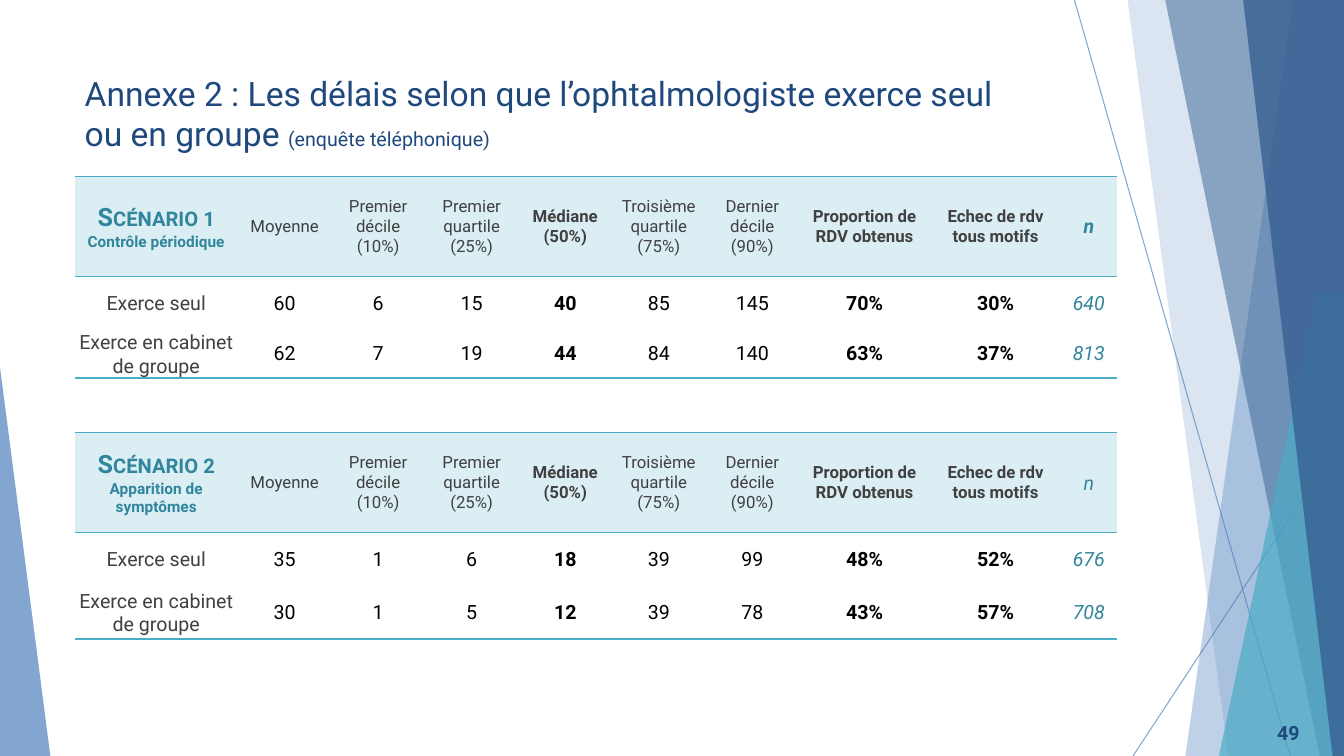
from dataclasses import dataclass

import pptx
import pptx.dml.color
import pptx.enum.shapes
import pptx.enum.text
import pptx.oxml
import pptx.oxml.ns
import pptx.util

RGBColor = pptx.dml.color.RGBColor
BLUE = RGBColor(0x4F, 0x81, 0xBD)
DEEP_BLUE = RGBColor(0x37, 0x60, 0x92)
NAVY = RGBColor(0x1F, 0x49, 0x7D)
AQUA = RGBColor(0x4B, 0xAC, 0xC6)
TEAL = RGBColor(0x31, 0x85, 0x9C)
PALE_AQUA = RGBColor(0xDB, 0xEE, 0xF4)
GREY = RGBColor(0x40, 0x40, 0x40)
BLACK = RGBColor(0, 0, 0)

FONT = "Roboto"
SLIDE_WIDTH = pptx.util.Inches(13.333)
SLIDE_HEIGHT = pptx.util.Inches(7.5)
NO_STYLE = "{2D5ABB26-0587-4C30-8999-92F81FD0307C}"
CENTER = pptx.enum.text.PP_ALIGN.CENTER
MIDDLE = pptx.enum.text.MSO_ANCHOR.MIDDLE

LEFT = 5.55
COLUMN_SHARES = [12.15] + [6.96] * 6 + [9.75] * 2 + [4.13]
MEASURES = ["Moyenne", "Premier décile\n(10%)", "Premier quartile\n(25%)", "Médiane\n(50%)",
            "Troisième quartile (75%)", "Dernier décile\n(90%)",
            "Proportion de RDV obtenus", "Echec de rdv tous motifs"]
KEY_COLUMNS = {4, 7, 8}
COUNT_COLUMN = 9


@dataclass(frozen=True)
class Facet:
    points: list[tuple[float, float]]
    color: RGBColor
    opacity: int


@dataclass(frozen=True)
class Ray:
    start: tuple[float, float]
    end: tuple[float, float]


@dataclass(frozen=True)
class Look:
    size: float
    color: RGBColor
    bold: bool = False
    italic: bool = False
    small_caps: bool = False


@dataclass(frozen=True)
class Scenario:
    heading: str
    reason: str
    top: float
    row_shares: list[float]
    count_bold: bool
    alone: list[str]
    grouped: list[str]


RAYS = [Ray((79.95, 0), (96, 100)), Ray((100, 57.6), (84.3, 100))]
FACETS = [
    Facet([(96.2, 0), (100, 0), (100, 100), (88.2, 100)], BLUE, 36),
    Facet([(83.9, 0), (100, 0), (100, 100), (91.4, 100)], BLUE, 20),
    Facet([(86.7, 0), (100, 0), (100, 100), (98.2, 100)], DEEP_BLUE, 50),
    Facet([(98, 38.8), (100, 38.8), (100, 100), (90.7, 100)], AQUA, 70),
    Facet([(92.5, 0), (100, 0), (100, 100), (99.15, 100)], DEEP_BLUE, 80),
]
SCENARIOS = [
    Scenario("Scénario 1", "Contrôle périodique", 23.33, [13.2, 7.07, 6.4], True,
             ["60", "6", "15", "40", "85", "145", "70%", "30%", "640"],
             ["62", "7", "19", "44", "84", "140", "63%", "37%", "813"]),
    Scenario("Scénario 2", "Apparition de symptômes", 57.2, [13.2, 7.07, 7.07], False,
             ["35", "1", "6", "18", "39", "99", "48%", "52%", "676"],
             ["30", "1", "5", "12", "39", "78", "43%", "57%", "708"]),
]


def across(share: float) -> int:
    return round(SLIDE_WIDTH * share / 100)


def down(share: float) -> int:
    return round(SLIDE_HEIGHT * share / 100)


def set_opacity(shape, percent: int) -> None:
    tint = shape._element.spPr.find(".//" + pptx.oxml.ns.qn("a:srgbClr"))
    pptx.oxml.ns.qn("a:alpha")
    tint.append(pptx.oxml.parse_xml(
        f'<a:alpha {pptx.oxml.ns.nsdecls("a")} val="{percent * 1000}"/>'))


def paint(shape, color: RGBColor, opacity: int) -> None:
    shape.shadow.inherit = False
    shape.fill.solid()
    shape.fill.fore_color.rgb = color
    shape.line.fill.background()
    set_opacity(shape, opacity)


def draw_ray(slide, ray: Ray) -> None:
    line = slide.shapes.add_connector(
        pptx.enum.shapes.MSO_CONNECTOR.STRAIGHT,
        across(ray.start[0]), down(ray.start[1]), across(ray.end[0]), down(ray.end[1]))
    line.line.color.rgb = BLUE
    line.line.width = pptx.util.Pt(0.75)
    set_opacity(line, 70)
    line._element.spPr.append(
        pptx.oxml.parse_xml(f'<a:effectLst {pptx.oxml.ns.nsdecls("a")}/>'))


def draw_facet(slide, facet: Facet) -> None:
    corners = [(across(x), down(y)) for x, y in facet.points]
    outline = slide.shapes.build_freeform(*corners[0])
    outline.add_line_segments(corners[1:], close=True)
    paint(outline.convert_to_shape(), facet.color, facet.opacity)


def add_run(paragraph, text: str, look: Look) -> None:
    run = paragraph.add_run()
    run.text = text
    run.font.name = FONT
    run.font.size = pptx.util.Pt(look.size)
    run.font.color.rgb = look.color
    run.font.bold = look.bold
    run.font.italic = look.italic
    if look.small_caps:
        run._r.get_or_add_rPr().set("cap", "small")


def add_rule(cell, side: str) -> None:
    cell._tc.get_or_add_tcPr().append(pptx.oxml.parse_xml(
        f'<a:{side} {pptx.oxml.ns.nsdecls("a")} w="12700"><a:solidFill>'
        f'<a:srgbClr val="{AQUA}"/></a:solidFill></a:{side}>'))


def fill_cell(cell, lines: list[tuple[str, Look]], inset: float) -> None:
    cell.margin_left = cell.margin_right = cell.margin_top = pptx.util.Inches(inset)
    cell.margin_bottom = 0
    cell.vertical_anchor = MIDDLE
    for index, (text, look) in enumerate(lines):
        frame = cell.text_frame
        paragraph = frame.add_paragraph() if index else frame.paragraphs[0]
        paragraph.alignment = CENTER
        add_run(paragraph, text, look)


def draw_scenario(slide, scenario: Scenario) -> None:
    table = slide.shapes.add_table(
        3, len(COLUMN_SHARES), across(LEFT), down(scenario.top),
        across(sum(COLUMN_SHARES)), down(sum(scenario.row_shares))).table
    table.first_row = table.horz_banding = False
    table._tbl.tblPr[0].text = NO_STYLE
    for column, share in zip(table.columns, COLUMN_SHARES):
        column.width = across(share)
    for row, share in zip(table.rows, scenario.row_shares):
        row.height = down(share)

    header = [[(scenario.heading, Look(18, TEAL, bold=True, small_caps=True)),
               (scenario.reason, Look(11, TEAL, bold=True))]]
    for column, measure in enumerate(MEASURES, start=1):
        look = Look(12, GREY, bold=column in KEY_COLUMNS)
        header.append([(line, look) for line in measure.split("\n")])
    header.append([("n", Look(14, TEAL, bold=scenario.count_bold, italic=True))])

    rows = [header]
    for practice, values in (("Exerce seul", scenario.alone),
                             ("Exerce en cabinet de groupe", scenario.grouped)):
        cells = [[(practice, Look(14, GREY))]]
        for column, value in enumerate(values, start=1):
            is_count = column == COUNT_COLUMN
            cells.append([(value, Look(14, TEAL if is_count else BLACK,
                                       bold=column in KEY_COLUMNS, italic=is_count))])
        rows.append(cells)

    for row, cells in enumerate(rows):
        for column, lines in enumerate(cells):
            cell = table.cell(row, column)
            wide_inset = column == 0 or (row == 0 and column == COUNT_COLUMN)
            fill_cell(cell, lines, 0.02 if wide_inset else 0.01)
            for side in (["lnT", "lnB"], [], ["lnB"])[row]:
                add_rule(cell, side)
            if row == 0:
                cell.fill.solid()
                cell.fill.fore_color.rgb = PALE_AQUA
            else:
                cell.fill.background()


def main() -> None:
    deck = pptx.Presentation()
    deck.slide_width, deck.slide_height = SLIDE_WIDTH, SLIDE_HEIGHT
    slide = deck.slides.add_slide(deck.slide_layouts[5])
    for ray in RAYS:
        draw_ray(slide, ray)
    for facet in FACETS:
        draw_facet(slide, facet)
    left_wedge = slide.shapes.add_shape(
        pptx.enum.shapes.MSO_SHAPE.ISOSCELES_TRIANGLE,
        0, down(48.53), across(3.75), down(51.47))
    left_wedge.adjustments[0] = 0
    paint(left_wedge, BLUE, 70)

    title = slide.shapes.title
    title.left, title.top = across(LEFT), down(8.93)
    title.width, title.height = across(70.5), down(13.33)
    heading = title.text_frame
    heading.word_wrap = True
    heading.auto_size = pptx.enum.text.MSO_AUTO_SIZE.NONE
    heading.vertical_anchor = pptx.enum.text.MSO_ANCHOR.TOP
    heading.paragraphs[0].alignment = pptx.enum.text.PP_ALIGN.LEFT
    add_run(heading.paragraphs[0],
            "Annexe 2 : Les délais selon que l’ophtalmologiste exerce seul ou en groupe ",
            Look(24, NAVY))
    add_run(heading.paragraphs[0], "(enquête téléphonique)", Look(14, NAVY))

    for scenario in SCENARIOS:
        draw_scenario(slide, scenario)

    page_number = slide.shapes.add_textbox(
        across(91.8), down(94.27), across(5.63), down(5.33)).text_frame
    page_number.word_wrap = True
    page_number.vertical_anchor = MIDDLE
    page_number.paragraphs[0].alignment = pptx.enum.text.PP_ALIGN.RIGHT
    add_run(page_number.paragraphs[0], "49", Look(14, NAVY, bold=True))
    deck.save("out.pptx")


if __name__ == "__main__":
    main()
